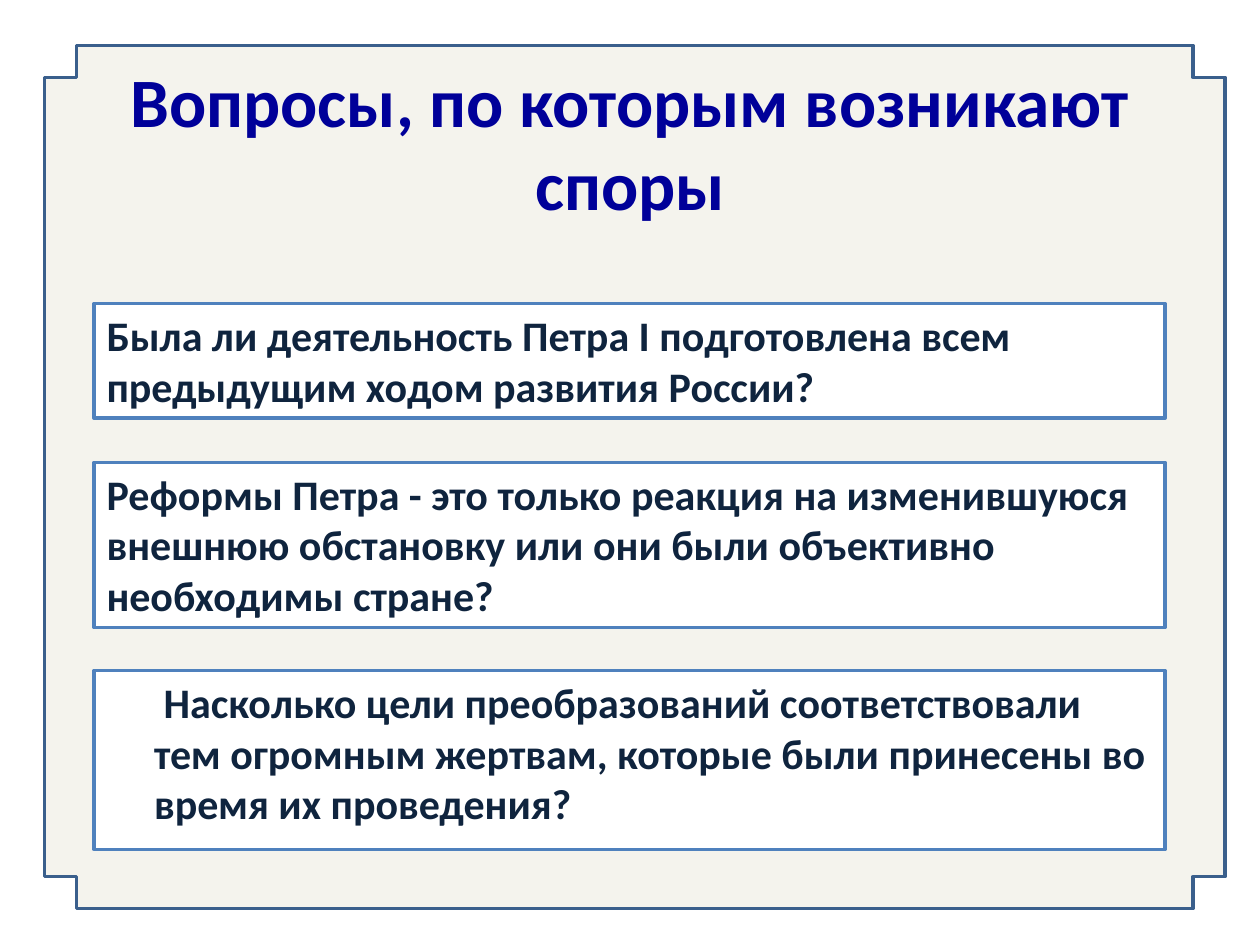
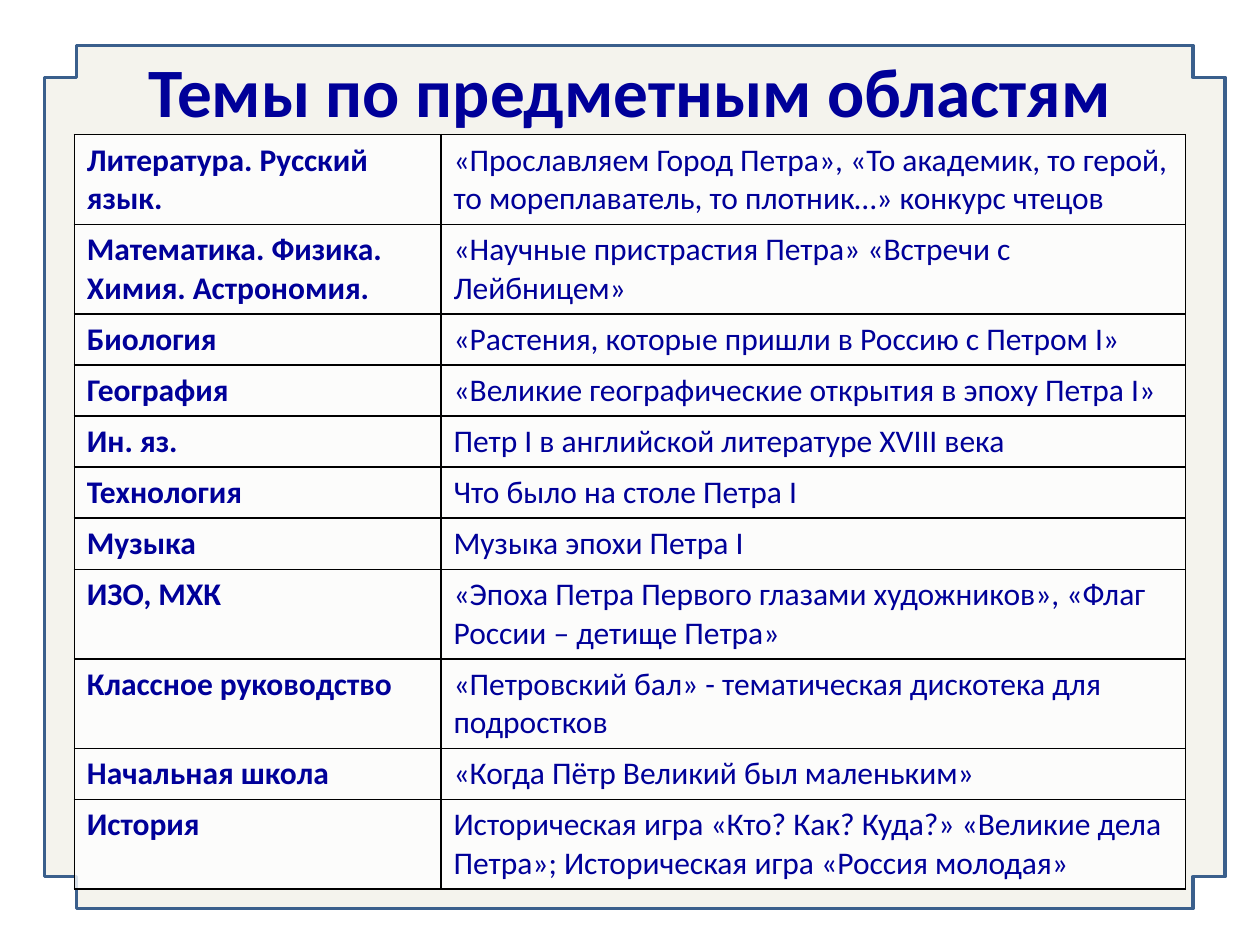
from lxml.etree import SubElement
from pptx import Presentation
from pptx.dml.color import RGBColor as RGB
from pptx.enum.shapes import MSO_SHAPE as SHAPE
from pptx.enum.text import MSO_ANCHOR as ANCHOR, MSO_AUTO_SIZE as AUTOSIZE, PP_ALIGN as ALIGN
from pptx.oxml import parse_xml
from pptx.oxml.ns import nsdecls, qn
from pptx.util import Pt

COLORS = {
    "title": "000099",
    "question": "0F243E",
    "paper": "EEECE1",
    "frame": "3A5F8C",
    "box": "4F81BD",
    "white": "FFFFFF",
    "grid": "000000",
}
FONT = "Calibri"


def write(tf, text, size=24, color="question", bold=True, align=ALIGN.LEFT,
          anchor=ANCHOR.TOP, left=0, first=0):
    """Fill the frame with one paragraph; left and first are its indents in points."""
    tf.word_wrap = True
    tf.auto_size = AUTOSIZE.NONE
    tf.vertical_anchor = anchor
    p = tf.paragraphs[0]
    p.alignment = align
    p.space_before = Pt(0)
    pPr = p._p.get_or_add_pPr()
    pPr.set("marL", str(Pt(left)))
    pPr.set("indent", str(Pt(first)))
    SubElement(pPr, qn("a:buNone"))
    r = p.add_run()
    r.text = text
    r.font.name = FONT
    r.font.size = Pt(size)
    r.font.bold = bold
    r.font.color.rgb = RGB.from_string(COLORS[color])


def paint(fill, color, opacity=100):
    """Set a solid fill with the given opacity in percent."""
    fill.solid()
    fill.fore_color.rgb = RGB.from_string(COLORS[color])
    if opacity < 100:
        clr = fill._xPr.find(qn("a:solidFill")).find(qn("a:srgbClr"))
        SubElement(clr, qn("a:alpha")).set("val", str(opacity * 1000))


prs = Presentation()
prs.slide_width, prs.slide_height = Pt(720), Pt(540)

# Both slides: notched frame and title
titles = [
    ("Вопросы, по которым возникают споры", 1, (36, 44.6, 648, 72.7)),
    ("Темы по предметным областям", 5, (48.2, 31.7, 623.5, 39.6)),
]
slides = []
for text, layout, place in titles:
    s = prs.slides.add_slide(prs.slide_layouts[layout])
    frame = s.shapes.add_shape(SHAPE.CROSS, Pt(25.5), Pt(26), Pt(674.6), Pt(493.2))
    frame.adjustments[0] = 0.037
    frame.shadow.inherit = False
    paint(frame.fill, "paper", 60)
    frame.line.color.rgb = RGB.from_string(COLORS["frame"])
    frame.line.width = Pt(2)
    s.shapes._spTree.insert(2, frame._element)  # behind the placeholders

    title = s.shapes.title
    title.left, title.top, title.width, title.height = map(Pt, place)
    write(title.text_frame, text, size=39.6, color="title",
          align=ALIGN.CENTER, anchor=ANCHOR.MIDDLE)
    slides.append(s)

questions_slide, topics_slide = slides

# Slide 1: three boxed questions
body = questions_slide.placeholders[1]
questions = [
    (questions_slide.shapes.add_textbox(0, 0, 0, 0), 173.5, 65.5, {},
     "Была ли деятельность Петра I подготовлена всем предыдущим ходом развития России?"),
    (questions_slide.shapes.add_textbox(0, 0, 0, 0), 264.2, 94.5, {},
     "Реформы Петра - это только реакция на изменившуюся внешнюю обстановку "
     "или они были объективно необходимы стране?"),
    (body, 383.2, 102.2, {"left": 27, "first": 5.5},
     "Насколько цели преобразований соответствовали тем огромным жертвам, "
     "которые были принесены во время их проведения?"),
]
for sp, top, height, indents, text in questions:
    sp.left, sp.top, sp.width, sp.height = Pt(53.8), Pt(top), Pt(612), Pt(height)
    paint(sp.fill, "white")
    sp.line.color.rgb = RGB.from_string(COLORS["box"])
    sp.line.width = Pt(2)
    write(sp.text_frame, text, **indents)

# Slide 2: table of topics by school subject
topics = [
    ("Литература. Русский язык.",
     "«Прославляем Город Петра», «То академик, то герой, то мореплаватель, "
     "то плотник…» конкурс чтецов"),
    ("Математика. Физика. Химия. Астрономия.",
     "«Научные пристрастия Петра» «Встречи с Лейбницем»"),
    ("Биология", "«Растения, которые пришли в Россию с Петром I»"),
    ("География", "«Великие географические открытия в эпоху Петра I»"),
    ("Ин. яз.", "Петр I в английской литературе XVIII века"),
    ("Технология", "Что было на столе Петра I"),
    ("Музыка", "Музыка эпохи Петра I"),
    ("ИЗО, МХК", "«Эпоха Петра Первого глазами художников», «Флаг России – детище Петра»"),
    ("Классное руководство", "«Петровский бал» - тематическая дискотека для подростков"),
    ("Начальная школа", "«Когда Пётр Великий был маленьким»"),
    ("История",
     "Историческая игра «Кто? Как? Куда?» «Великие дела Петра»; "
     "Историческая игра «Россия молодая»"),
]
row_height = 29.2
table = topics_slide.shapes.add_table(
    len(topics), 2, Pt(42.5), Pt(77), Pt(635), Pt(row_height * len(topics))).table
table.first_row = table.horz_banding = False
table.columns[0].width, table.columns[1].width = Pt(209.5), Pt(425.5)

for i, row in enumerate(topics):
    table.rows[i].height = Pt(row_height)
    for j, text in enumerate(row):
        cell = table.cell(i, j)
        write(cell.text_frame, text, size=18, color="title", bold=j == 0)
        paint(cell.fill, "white", 80)
        tcPr = cell._tc.get_or_add_tcPr()
        for k, side in enumerate("LRTB"):
            tcPr.insert(k, parse_xml(
                f'<a:ln{side} {nsdecls("a")} w="{Pt(1)}"><a:solidFill>'
                f'<a:srgbClr val="{COLORS["grid"]}"/></a:solidFill></a:ln{side}>'))

prs.save("out.pptx")
